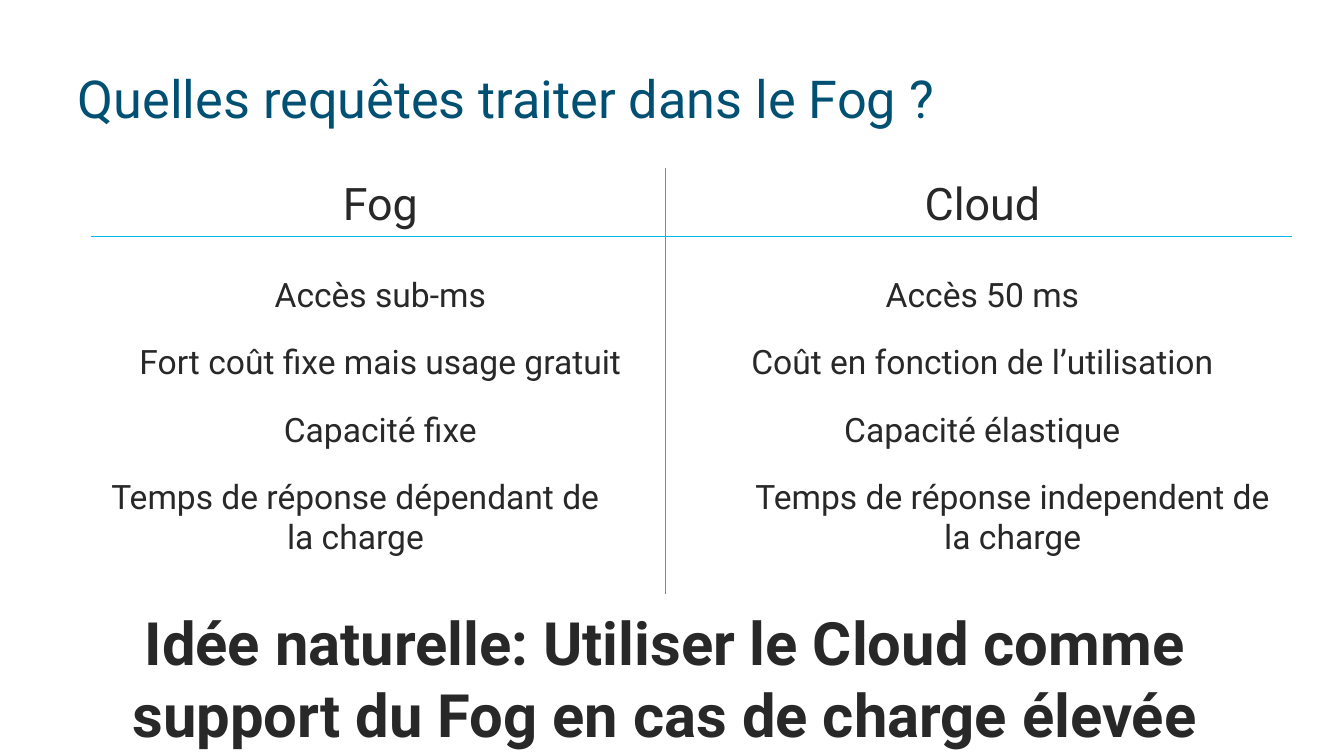
from lxml import etree
from pptx import Presentation
from pptx.dml.color import RGBColor
from pptx.enum.shapes import MSO_CONNECTOR as Connector, MSO_SHAPE as Shape
from pptx.enum.text import MSO_ANCHOR as Anchor, MSO_AUTO_SIZE as AutoSize, PP_ALIGN as Align
from pptx.oxml.ns import qn
from pptx.util import Inches, Pt

COLORS = {"title": "005073", "text": "282828", "line": "00B8E6", "background": "FFFFFF"}
FONT = "Roboto"
ROW_TOP, ROW_PITCH = 0.74, 0.5

FOG = {
    "heading": ("Fog", 0.78),
    "rows": [("Accès sub-ms", 1.88), ("Fort coût fixe mais usage gratuit", 3.85), ("Capacité fixe", 1.68)],
    "closing": "Temps de réponse dépendant de la charge",
}
CLOUD = {
    "heading": ("Cloud", 1.09),
    "rows": [("Accès 50 ms", 1.71), ("Coût en fonction de l’utilisation", 3.7), ("Capacité élastique", 2.3)],
    "closing": "Temps de réponse independent de la charge",
}


def color(name):
    """Return the named palette colour."""
    return RGBColor.from_string(COLORS[name])


def write(shape, text, size=18, fill="text", bold=False, align=Align.CENTER,
          anchor=Anchor.TOP, wrap=True, auto_size=AutoSize.SHAPE_TO_FIT_TEXT, spacing=None):
    """Write formatted text into a shape."""
    frame = shape.text_frame
    frame.word_wrap = wrap
    frame.auto_size = auto_size
    frame.vertical_anchor = anchor
    frame.margin_left = frame.margin_right = Inches(0.1)
    frame.margin_top = frame.margin_bottom = Inches(0.05)
    paragraph = frame.paragraphs[0]
    paragraph.alignment = align
    paragraph.line_spacing = spacing
    run = paragraph.add_run()
    run.text = text
    run.font.name = FONT
    run.font.size = Pt(size)
    run.font.bold = bold
    run.font.color.rgb = color(fill)


def add_text(slide, box, text, **style):
    """Add a text box holding formatted text."""
    write(slide.shapes.add_textbox(*map(Inches, box)), text, **style)


def add_line(slide, *ends):
    """Add a thin straight line between two points."""
    line = slide.shapes.add_connector(Connector.STRAIGHT, *map(Inches, ends))
    line.line.color.rgb = color("line")
    line.line.width = Pt(0.75)
    etree.SubElement(line._element.spPr, qn("a:effectLst"))


def add_title(slide, box, text):
    """Place and fill the title placeholder."""
    title = slide.shapes.title
    title.left, title.top, title.width, title.height = map(Inches, box)
    write(title, text, size=28, fill="title", align=Align.LEFT, anchor=Anchor.MIDDLE,
          auto_size=AutoSize.NONE, spacing=0.8)


def add_dividers(slide, box, column, row):
    """Draw the cross that separates the columns and their headings."""
    left, top, width, height = box
    add_line(slide, left + column, top, left + column, top + height)
    add_line(slide, left, top + row, left + width, top + row)


def add_column(slide, box, center, content):
    """Add a heading, its centred rows and a closing row across the box."""
    left, top, width, _ = box
    middle = left + center
    heading, heading_width = content["heading"]
    add_text(slide, (middle - heading_width / 2, top + 0.01, heading_width, 0.5), heading,
             size=24, wrap=False)
    for index, (text, text_width) in enumerate(content["rows"]):
        row_top = top + ROW_TOP + index * ROW_PITCH
        add_text(slide, (middle - text_width / 2, row_top, text_width, 0.4), text, wrap=False)
    closing_top = top + ROW_TOP + len(content["rows"]) * ROW_PITCH
    add_text(slide, (left, closing_top, width, 0.71), content["closing"])


def add_conclusion(slide, box, text):
    """Add the bold closing statement on a plain panel."""
    panel = slide.shapes.add_shape(Shape.RECTANGLE, *map(Inches, box))
    panel.shadow.inherit = False
    panel.fill.solid()
    panel.fill.fore_color.rgb = color("background")
    panel.line.fill.background()
    write(panel, text, size=32, bold=True)


def main():
    """Build and save the slide."""
    presentation = Presentation()
    presentation.slide_width = Inches(10)
    presentation.slide_height = Inches(10 * 9 / 16)
    slide = presentation.slides.add_slide(presentation.slide_layouts[5])
    slide.background.fill.solid()
    slide.background.fill.fore_color.rgb = color("background")
    add_title(slide, (0.48, 0.37, 9.13, 0.8), "Quelles requêtes traiter dans le Fog ?")
    add_dividers(slide, (0.68, 1.25, 8.93, 3.17), column=4.27, row=0.51)
    add_column(slide, (0.68, 1.25, 3.93, 3.17), 2.15, FOG)
    add_column(slide, (5.46, 1.25, 4.15, 3.17), 1.85, CLOUD)
    add_conclusion(slide, (0.39, 4.46, 9.12, 1.18),
                   "Idée naturelle: Utiliser le Cloud comme support du Fog en cas de charge élevée")
    presentation.save("out.pptx")


if __name__ == "__main__":
    main()
